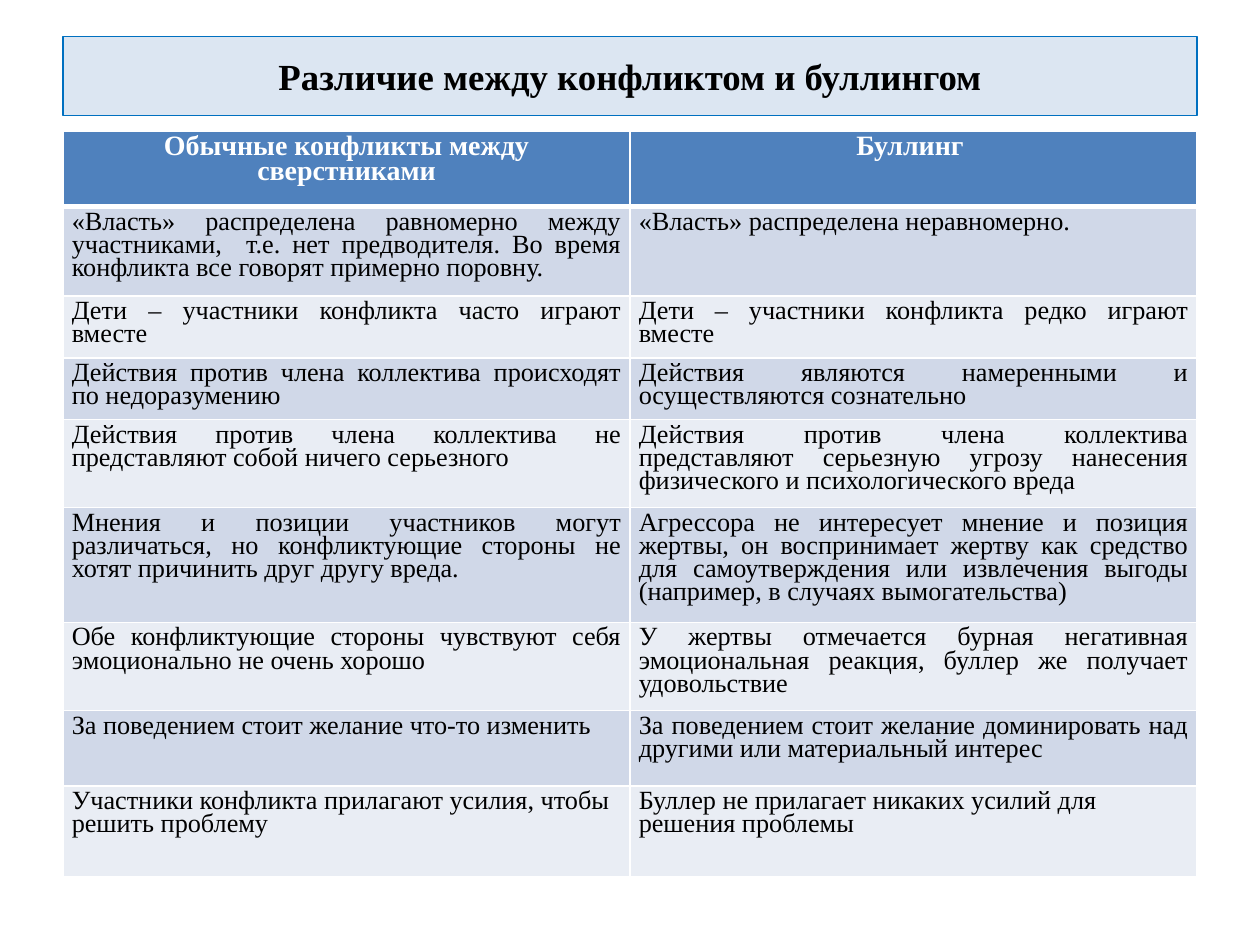
from lxml import etree
from pptx import Presentation
from pptx.dml.color import RGBColor
from pptx.enum.shapes import MSO_SHAPE
from pptx.enum.text import MSO_ANCHOR, PP_ALIGN
from pptx.oxml.ns import qn
from pptx.util import Inches, Pt

RECTANGLE = MSO_SHAPE.RECTANGLE
MIDDLE = MSO_ANCHOR.MIDDLE
LEFT, CENTER, JUSTIFY = PP_ALIGN.LEFT, PP_ALIGN.CENTER, PP_ALIGN.JUSTIFY

FONT = "Times New Roman"
COLORS = {
    "text": "000000",
    "white": "FFFFFF",
    "title_fill": "DCE6F2",
    "title_line": "0070C0",
    "header": "4F81BD",
    "dark_band": "D0D8E8",
    "light_band": "E9EDF4",
}

TITLE = "Различие между конфликтом и буллингом"
HEADINGS = ("Обычные конфликты между сверстниками", "Буллинг ")
DIFFERENCES = [
    ("«Власть» распределена равномерно между участниками,  т.е. нет предводителя. "
     "Во время конфликта все говорят примерно поровну.",
     "«Власть» распределена неравномерно."),
    ("Дети – участники конфликта часто играют вместе",
     "Дети – участники конфликта редко играют вместе"),
    ("Действия против члена коллектива происходят по недоразумению",
     "Действия являются намеренными и осуществляются сознательно"),
    ("Действия против члена коллектива не представляют собой ничего серьезного",
     "Действия против члена коллектива представляют серьезную угрозу нанесения "
     "физического и психологического вреда"),
    ("Мнения и позиции участников могут различаться, но конфликтующие стороны "
     "не хотят причинить друг другу вреда.",
     "Агрессора не интересует мнение и позиция жертвы, он воспринимает жертву "
     "как средство для самоутверждения или извлечения выгоды "
     "(например, в случаях вымогательства)"),
    ("Обе конфликтующие стороны чувствуют себя эмоционально не очень хорошо",
     "У жертвы отмечается бурная негативная эмоциональная реакция, "
     "буллер же получает удовольствие"),
    ("За поведением стоит желание что-то изменить",
     "За поведением стоит желание доминировать над другими или материальный интерес"),
    ("Участники конфликта прилагают усилия, чтобы решить проблему",
     "Буллер не прилагает никаких усилий для решения проблемы"),
]
ROW_HEIGHTS = (0.6, 0.71, 0.49, 0.49, 0.7, 0.91, 0.7, 0.6, 0.72)
LEFT_ALIGNED = {(7, 0), (8, 0), (8, 1)}


def rgb(name):
    return RGBColor.from_string(COLORS[name])


def write_text(frame, text, size, color="text", bold=False, align=LEFT, spacing=1.0):
    frame.word_wrap = True
    paragraph = frame.paragraphs[0]
    paragraph.alignment = align
    paragraph.line_spacing = spacing
    run = paragraph.add_run()
    run.text = text
    run.font.name = FONT
    run.font.size = Pt(size)
    run.font.bold = bold
    run.font.color.rgb = rgb(color)


def set_borders(cell, top=1, bottom=1):
    properties = cell._tc.get_or_add_tcPr()
    sides = (("lnL", 1), ("lnR", 1), ("lnT", top), ("lnB", bottom))
    for position, (side, width) in enumerate(sides):
        line = etree.Element(qn(f"a:{side}"), w=str(Pt(width)))
        fill = etree.SubElement(line, qn("a:solidFill"))
        etree.SubElement(fill, qn("a:srgbClr"), val=COLORS["white"])
        properties.insert(position, line)


def add_title(slide, left, top, width, height):
    banner = slide.shapes.add_shape(RECTANGLE, left, top, width, height)
    banner.shadow.inherit = False
    banner.fill.solid()
    banner.fill.fore_color.rgb = rgb("title_fill")
    banner.line.color.rgb = rgb("title_line")
    banner.line.width = Pt(0.75)
    banner.text_frame.vertical_anchor = MIDDLE
    write_text(banner.text_frame, TITLE, size=21, bold=True, align=CENTER)


def fill_cell(cell, text, row, column):
    cell.margin_left = cell.margin_right = Inches(0.07)
    cell.margin_top = cell.margin_bottom = Inches(0.04)
    cell.fill.solid()
    if row == 0:
        cell.fill.fore_color.rgb = rgb("header")
        set_borders(cell, bottom=3)
        write_text(cell.text_frame, text, size=16, color="white", bold=True,
                   align=CENTER, spacing=0.8)
        return
    cell.fill.fore_color.rgb = rgb("dark_band" if row % 2 else "light_band")
    set_borders(cell, top=3 if row == 1 else 1)
    align = LEFT if (row, column) in LEFT_ALIGNED else JUSTIFY
    write_text(cell.text_frame, text, size=15, align=align, spacing=0.8)


def add_comparison(slide, left, top, width, height):
    rows = [HEADINGS, *DIFFERENCES]
    comparison = slide.shapes.add_table(
        len(rows), len(HEADINGS), left, top, width, height).table
    for column in comparison.columns:
        column.width = width // len(HEADINGS)
    for row, texts in enumerate(rows):
        comparison.rows[row].height = Inches(ROW_HEIGHTS[row])
        for column, text in enumerate(texts):
            fill_cell(comparison.cell(row, column), text, row, column)


def main():
    deck = Presentation()
    deck.slide_width, deck.slide_height = Inches(10), Inches(7.5)
    slide = deck.slides.add_slide(deck.slide_layouts[6])
    add_title(slide, Inches(0.5), Inches(0.29), Inches(9), Inches(0.63))
    add_comparison(slide, Inches(0.5), Inches(1.04), Inches(9), Inches(sum(ROW_HEIGHTS)))
    deck.save("out.pptx")


if __name__ == "__main__":
    main()
